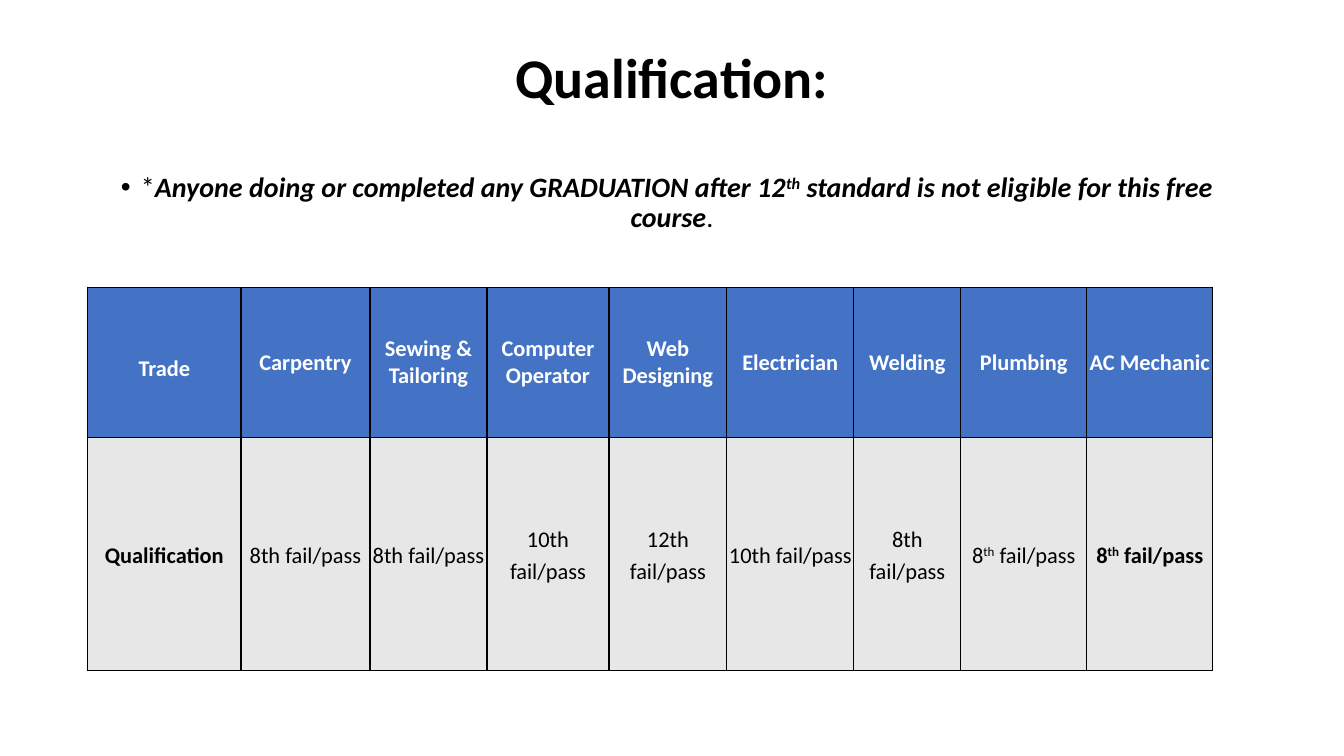
import pptx
import pptx.dml.color
import pptx.enum.text
import pptx.oxml.ns
import pptx.util
from lxml import etree
from pptx.util import Inches

RGBColor = pptx.dml.color.RGBColor
BLACK = RGBColor(0x00, 0x00, 0x00)
WHITE = RGBColor(0xFF, 0xFF, 0xFF)
HEADER_BLUE = RGBColor(0x44, 0x72, 0xC4)
BODY_GREY = RGBColor(0xE7, 0xE7, 0xE7)

FONT = "Calibri"
MIDDLE = pptx.enum.text.MSO_ANCHOR.MIDDLE
CENTER = pptx.enum.text.PP_ALIGN.CENTER

COLUMN_WIDTHS = [1.52, 1.28, 1.16, 1.21, 1.17, 1.26, 1.06, 1.25, 1.25]
ROW_HEIGHTS = [1.49, 2.31]
TRADES = ["Trade", "Carpentry", "Sewing & Tailoring", "Computer Operator",
          "Web Designing", "Electrician", "Welding", "Plumbing", "AC Mechanic"]
QUALIFICATIONS = [["Qualification"], ["8th fail/pass"], ["8th fail/pass"],
                  ["10th fail/pass"], ["12th fail/pass"], ["10th fail/pass"],
                  ["8th fail/pass"], ["8", "th", " fail/pass"],
                  ["8", "th", " fail/pass"]]


def add_child(parent, tag, **attributes):
    return etree.SubElement(parent, pptx.oxml.ns.qn(tag), **attributes)


def add_run(paragraph, text, size, color=BLACK, bold=False, italic=False):
    run = paragraph.add_run()
    run.text = text
    font = run.font
    font.name = FONT
    font.size = pptx.util.Pt(size)
    font.color.rgb = color
    font.bold = bold
    font.italic = italic
    if text == "th":
        run._r.get_or_add_rPr().set("baseline", "30000")


def add_centered_box(slide, top, height):
    shape = slide.shapes.add_textbox(
        Inches(1.1), Inches(top), Inches(11.13), Inches(height))
    frame = shape.text_frame
    frame.word_wrap = True
    frame.vertical_anchor = MIDDLE
    paragraph = frame.paragraphs[0]
    paragraph.alignment = CENTER
    paragraph.line_spacing = 0.9
    return paragraph


def add_bullet(paragraph):
    properties = paragraph._p.get_or_add_pPr()
    properties.set("marL", "0")
    properties.set("indent", str(Inches(-0.25)))
    add_child(properties, "a:buFont", typeface="Arial")
    add_child(properties, "a:buChar", char="•")


def add_borders(cell):
    properties = cell._tc.get_or_add_tcPr()
    for side in ("a:lnL", "a:lnR", "a:lnT", "a:lnB"):
        line = add_child(properties, side, w=str(pptx.util.Pt(1)))
        fill = add_child(line, "a:solidFill")
        add_child(fill, "a:srgbClr", val=str(BLACK))


def fill_cell(cell, texts, fill, color, bold, spacing):
    add_borders(cell)
    cell.fill.solid()
    cell.fill.fore_color.rgb = fill
    cell.vertical_anchor = MIDDLE
    cell.margin_left = cell.margin_right = 0
    cell.margin_top = cell.margin_bottom = 0
    paragraph = cell.text_frame.paragraphs[0]
    paragraph.alignment = CENTER
    paragraph.line_spacing = spacing
    for text in texts:
        add_run(paragraph, text, 16, color, bold)


def add_trade_table(slide):
    table = slide.shapes.add_table(
        len(ROW_HEIGHTS), len(COLUMN_WIDTHS), Inches(0.87), Inches(2.85),
        Inches(sum(COLUMN_WIDTHS)), Inches(sum(ROW_HEIGHTS))).table
    for column, width in zip(table.columns, COLUMN_WIDTHS):
        column.width = Inches(width)
    for row, height in zip(table.rows, ROW_HEIGHTS):
        row.height = Inches(height)
    last = len(TRADES) - 1
    for index, (trade, qualification) in enumerate(zip(TRADES, QUALIFICATIONS)):
        fill_cell(table.cell(0, index), [trade], HEADER_BLUE, WHITE, True,
                  1.5 if index == 0 else 1.0)
        fill_cell(table.cell(1, index), qualification, BODY_GREY, BLACK,
                  index in (0, last), 1.15)


def main():
    presentation = pptx.Presentation()
    presentation.slide_width = Inches(13.33)
    presentation.slide_height = Inches(7.5)
    slide = presentation.slides.add_slide(presentation.slide_layouts[6])

    title = add_centered_box(slide, 0.19, 1.22)
    add_run(title, "Qualification:", 40, bold=True)

    note = add_centered_box(slide, 1.6, 0.84)
    note.space_after = pptx.util.Pt(6)
    add_bullet(note)
    add_run(note, "*", 20)
    for text in ("Anyone doing or completed any GRADUATION after 12", "th",
                 " standard is not eligible for this free course"):
        add_run(note, text, 20, bold=True, italic=True)
    add_run(note, ".", 20)

    add_trade_table(slide)
    presentation.save("out.pptx")


if __name__ == "__main__":
    main()
